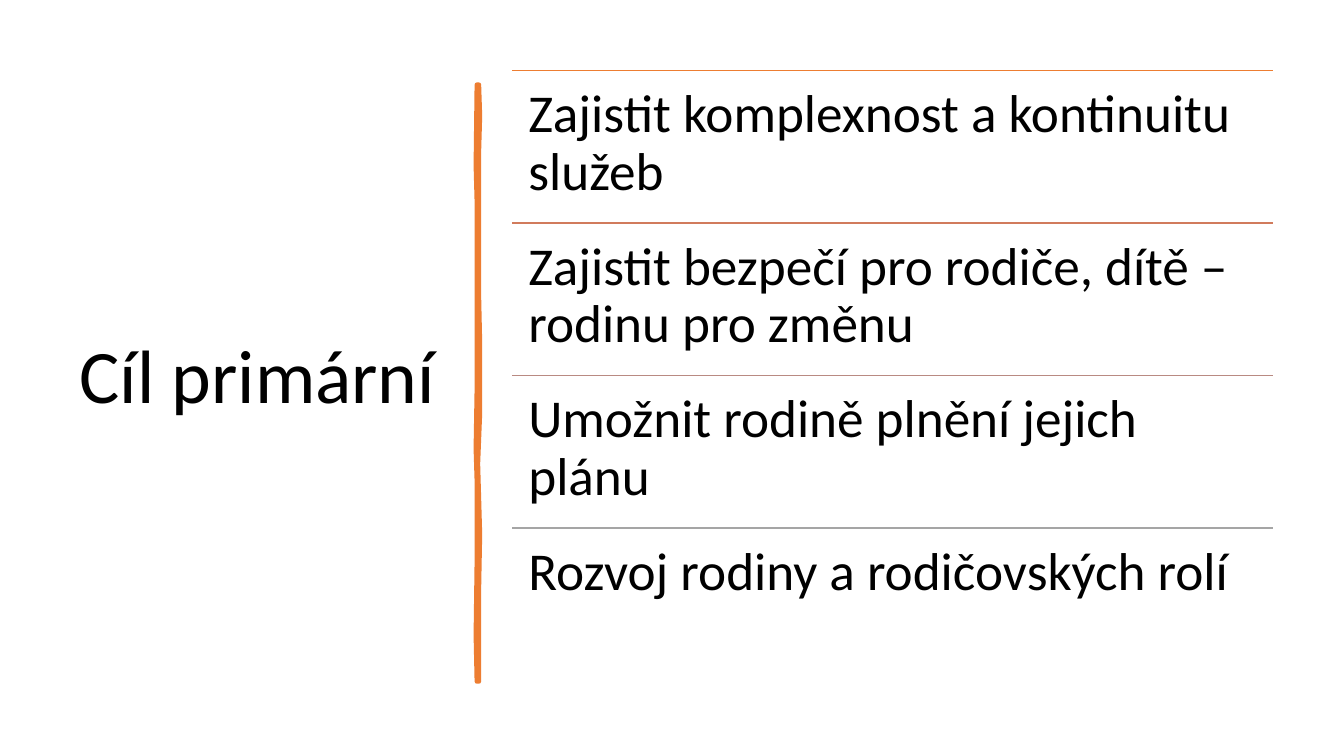
"""Build the slide listing the primary goals beside a hand-drawn divider."""
from lxml import etree
from pptx import Presentation, util as u
from pptx.dml.color import RGBColor
from pptx.enum import shapes, text
from pptx.oxml.ns import qn

TITLE = "Cíl primární"
COLORS = {"text": "000000", "brush": "ED7D31"}
GOALS = [
    ("Zajistit komplexnost a kontinuitu služeb", "ED7D31"),
    ("Zajistit bezpečí pro rodiče, dítě – rodinu pro změnu", "D17B5C"),
    ("Umožnit rodině plnění jejich plánu", "B98A82"),
    ("Rozvoj rodiny a rodičovských rolí", "A5A5A5"),
]
LIST_LEFT, LIST_TOP, LIST_WIDTH, ROW_HEIGHT = 5.08, 0.7, 7.55, 1.5133
BRUSH_RIGHT = [
    (4.75, 0.84), (4.76, 1.15), (4.75, 1.5), (4.75, 2.26), (4.75, 2.94),
    (4.76, 3.4), (4.76, 4.1), (4.74, 4.6), (4.76, 5.3), (4.75, 5.84), (4.75, 6.76),
]
BRUSH_LEFT = [
    (4.73, 6.76), (4.72, 6.3), (4.73, 5.57), (4.73, 4.77), (4.72, 4.45),
    (4.73, 3.86), (4.73, 3.0), (4.73, 2.0), (4.72, 1.64), (4.73, 0.84),
]


def write(box, words, size, inset, anchor):
    """Fill a text box or placeholder with one formatted paragraph."""
    frame = box.text_frame
    frame.word_wrap = True
    frame.auto_size = text.MSO_AUTO_SIZE.NONE
    frame.vertical_anchor = anchor
    frame.margin_left = frame.margin_right = u.Inches(inset[0])
    frame.margin_top = frame.margin_bottom = u.Inches(inset[1])
    para = frame.paragraphs[0]
    para.alignment = text.PP_ALIGN.LEFT
    para.line_spacing = 0.9
    span = para.add_run()
    span.text = words
    span.font.name = "Calibri"
    span.font.size = u.Pt(size)
    span.font.color.rgb = RGBColor.from_string(COLORS["text"])


def add_title(page):
    """Place the title left of the divider."""
    title = page.shapes.title
    title.left, title.top = u.Inches(0.69), u.Inches(0.7)
    title.width, title.height = u.Inches(3.74), u.Inches(6.11)
    write(title, TITLE, 54, (0.1, 0.05), text.MSO_ANCHOR.MIDDLE)


def add_brush(page):
    """Draw the uneven vertical stroke."""
    start, *points = [(u.Inches(x), u.Inches(y)) for x, y in BRUSH_RIGHT + BRUSH_LEFT]
    builder = page.shapes.build_freeform(*start)
    builder.add_line_segments(points, close=True)
    brush = builder.convert_to_shape()
    brush.shadow.inherit = False
    color = RGBColor.from_string(COLORS["brush"])
    brush.fill.solid()
    brush.fill.fore_color.rgb = color
    brush.line.color.rgb = color
    brush.line.width = u.Pt(3.25)
    etree.SubElement(brush.line._get_or_add_ln(), qn("a:round"))


def add_goal(page, index, words, color):
    """Add one ruled row of the list."""
    left, width = u.Inches(LIST_LEFT), u.Inches(LIST_WIDTH)
    top = u.Inches(LIST_TOP + index * ROW_HEIGHT)
    rule = page.shapes.add_connector(
        shapes.MSO_CONNECTOR.STRAIGHT, left, top, left + width, top)
    rule.line.color.rgb = RGBColor.from_string(color)
    rule.line.width = u.Pt(1)
    etree.SubElement(rule._element.spPr, qn("a:effectLst"))
    box = page.shapes.add_textbox(left, top, width, u.Inches(ROW_HEIGHT))
    write(box, words, 38, (0.16, 0.16), text.MSO_ANCHOR.TOP)


def main():
    """Assemble and save the deck."""
    deck = Presentation()
    deck.slide_width, deck.slide_height = u.Inches(13.33), u.Inches(7.5)
    page = deck.slides.add_slide(deck.slide_layouts[5])
    add_title(page)
    add_brush(page)
    for index, (words, color) in enumerate(GOALS):
        add_goal(page, index, words, color)
    deck.save("out.pptx")


if __name__ == "__main__":
    main()
